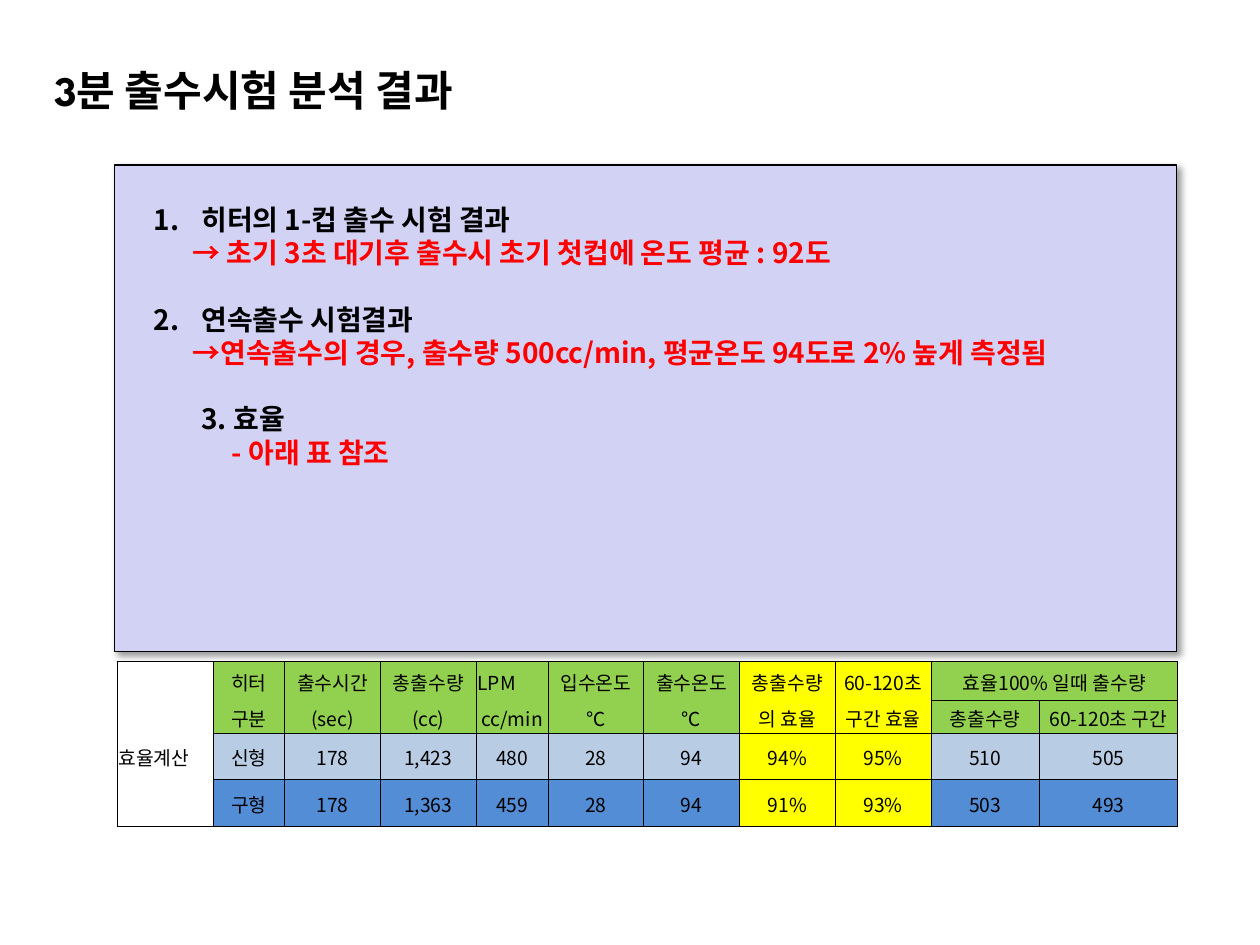
from dataclasses import dataclass

from lxml import etree
from pptx import Presentation
from pptx import util as u
from pptx.dml.color import RGBColor
from pptx.enum import shapes, text
from pptx.oxml import parse_xml
from pptx.oxml.ns import qn

NS = 'xmlns:a="http://schemas.openxmlformats.org/drawingml/2006/main"'
FONT = "Noto Sans CJK KR"
HEX = {
    "ink": "000000", "red": "FF0000", "panel": "D2D2F4", "white": "FFFFFF",
    "head": "92D050", "mark": "FFFF00", "new": "B8CCE4", "old": "538DD5",
}
MID = text.MSO_ANCHOR.MIDDLE
LEFT, CENTER = text.PP_ALIGN.LEFT, text.PP_ALIGN.CENTER


@dataclass
class Line:
    words: str
    color: str = "ink"
    left: float = 0.38
    number: int = 0
    gap: int = 0


LINES = [
    Line("히터의 1-컵 출수 시험 결과", number=1),
    Line("→ 초기 3초 대기후 출수시 초기 첫컵에 온도 평균 : 92도", "red", 0.31),
    Line("연속출수 시험결과", number=2, gap=19),
    Line("→연속출수의 경우, 출수량 500cc/min, 평균온도 94도로 2% 높게 측정됨",
         "red", 0.31),
    Line("3. 효율", gap=19),
    Line("- 아래 표 참조", "red", 0.62),
]

COLS = [0.76, 0.57, 0.76, 0.76, 0.57, 0.76, 0.76, 0.76, 0.76, 0.86, 1.1]
ROWS = [0.31, 0.26, 0.37, 0.37]
TINTS = ["head", "head", "new", "old"]
CELLS = [
    ["", "히터", "출수시간", "총출수량", "LPM", "입수온도", "출수온도",
     "총출수량", "60-120초", "효율100% 일때 출수량", ""],
    ["", "구분", "(sec)", "(cc)", "cc/min", "℃", "℃",
     "의 효율", "구간 효율", "총출수량", "60-120초 구간"],
    ["효율계산", "신형", "178", "1,423", "480", "28", "94",
     "94%", "95%", "510", "505"],
    ["", "구형", "178", "1,363", "459", "28", "94",
     "91%", "93%", "503", "493"],
]


def rgb(name: str) -> RGBColor:
    return RGBColor.from_string(HEX[name])


def put(obj, **vals) -> None:
    for key, val in vals.items():
        setattr(obj, key, val)


def inset(obj, left: float, top: float, right: float, low: float) -> None:
    put(obj, margin_left=u.Inches(left), margin_top=u.Inches(top),
        margin_right=u.Inches(right), margin_bottom=u.Inches(low))


def write(para, words: str, size: int, color: str = "ink",
          bold: bool = False, face: str = FONT) -> None:
    run = para.add_run()
    run.text = words
    put(run.font, size=u.Pt(size), bold=bold, name=face)
    run.font.color.rgb = rgb(color)
    east = etree.SubElement(run.font._element, qn("a:ea"))
    east.set("typeface", FONT)


def add_title(slide) -> None:
    box = slide.shapes.add_textbox(
        u.Inches(0.25), u.Inches(0.5), u.Inches(6), u.Inches(0.42))
    frame = box.text_frame
    put(frame, word_wrap=True, vertical_anchor=MID)
    inset(frame, 0.18, 0.05, 0.1, 0.05)
    write(frame.paragraphs[0], "3분 출수시험 분석 결과", 24,
          bold=True, face="League Spartan")


def add_line(para, item: Line) -> None:
    props = para._p.get_or_add_pPr()
    props.set("marL", str(u.Inches(item.left)))
    if item.number:
        props.set("indent", str(-u.Inches(item.left)))
        props.append(parse_xml(
            f'<a:buAutoNum {NS} type="arabicPeriod" startAt="{item.number}"/>'))
    put(para, alignment=LEFT, line_spacing=u.Pt(19))
    if item.gap:
        para.space_before = u.Pt(item.gap)
    write(para, item.words, 16, item.color, bold=True)


def add_panel(slide) -> None:
    box = slide.shapes.add_shape(
        shapes.MSO_SHAPE.RECTANGLE,
        u.Inches(0.91), u.Inches(1.31), u.Inches(8.43), u.Inches(3.86))
    box.fill.solid()
    box.fill.fore_color.rgb = rgb("panel")
    box.line.color.rgb = rgb("ink")
    box.line.width = u.Pt(0.75)
    box.shadow.inherit = False
    glow = box._element.spPr.find(qn("a:effectLst"))
    glow.append(parse_xml(
        f'<a:outerShdw {NS} blurRad="{u.Pt(4)}" dist="{u.Pt(3)}" '
        f'dir="2700000" algn="tl" rotWithShape="0">'
        f'<a:srgbClr val="{HEX["ink"]}"><a:alpha val="40000"/></a:srgbClr>'
        '</a:outerShdw>'))
    frame = box.text_frame
    put(frame, word_wrap=True, vertical_anchor=text.MSO_ANCHOR.TOP)
    inset(frame, 0.31, 0.3, 0.1, 0.05)
    for i, item in enumerate(LINES):
        para = frame.add_paragraph() if i else frame.paragraphs[0]
        add_line(para, item)


def edge(cell, row: int, col: int) -> None:
    """Rule a cell, leaving stacked header and side cells open between."""
    top = row == 0 or (col > 0 and row > 1) or col > 8
    low = row == 3 or (col > 0 and row > 0) or col > 8
    props = cell._tc.get_or_add_tcPr()
    for i, (tag, on) in enumerate(
            [("lnL", True), ("lnR", True), ("lnT", top), ("lnB", low)]):
        paint = (f'<a:solidFill><a:srgbClr val="{HEX["ink"]}"/></a:solidFill>'
                 if on else '<a:noFill/>')
        props.insert(i, parse_xml(
            f'<a:{tag} {NS} w="{u.Pt(0.5)}">{paint}</a:{tag}>'))


def tint(row: int, col: int) -> str:
    if col == 0:
        return "white"
    return "mark" if col in (7, 8) else TINTS[row]


def add_grid(slide) -> None:
    grid = slide.shapes.add_table(
        len(ROWS), len(COLS), u.Inches(0.93), u.Inches(5.25),
        u.Inches(sum(COLS)), u.Inches(sum(ROWS))).table
    put(grid, first_row=False, horz_banding=False)
    for col, wide in zip(grid.columns, COLS):
        col.width = u.Inches(wide)
    for row, high in zip(grid.rows, ROWS):
        row.height = u.Inches(high)
    for r, row in enumerate(CELLS):
        for c, words in enumerate(row):
            cell = grid.cell(r, c)
            cell.vertical_anchor = MID
            inset(cell, 0.01, 0.01, 0.01, 0)
            cell.fill.solid()
            cell.fill.fore_color.rgb = rgb(tint(r, c))
            edge(cell, r, c)
            para = cell.text_frame.paragraphs[0]
            side = c == 0 or words == "LPM"
            para.alignment = LEFT if side else CENTER
            if words:
                write(para, words, 11)
            else:
                para._p.append(parse_xml(f'<a:endParaRPr {NS} sz="1100"/>'))
    grid.cell(0, 9).merge(grid.cell(0, 10))


def main() -> None:
    deck = Presentation()
    put(deck, slide_width=u.Inches(10), slide_height=u.Inches(7.5))
    slide = deck.slides.add_slide(deck.slide_layouts[6])
    add_title(slide)
    add_panel(slide)
    add_grid(slide)
    deck.save("out.pptx")


if __name__ == "__main__":
    main()
